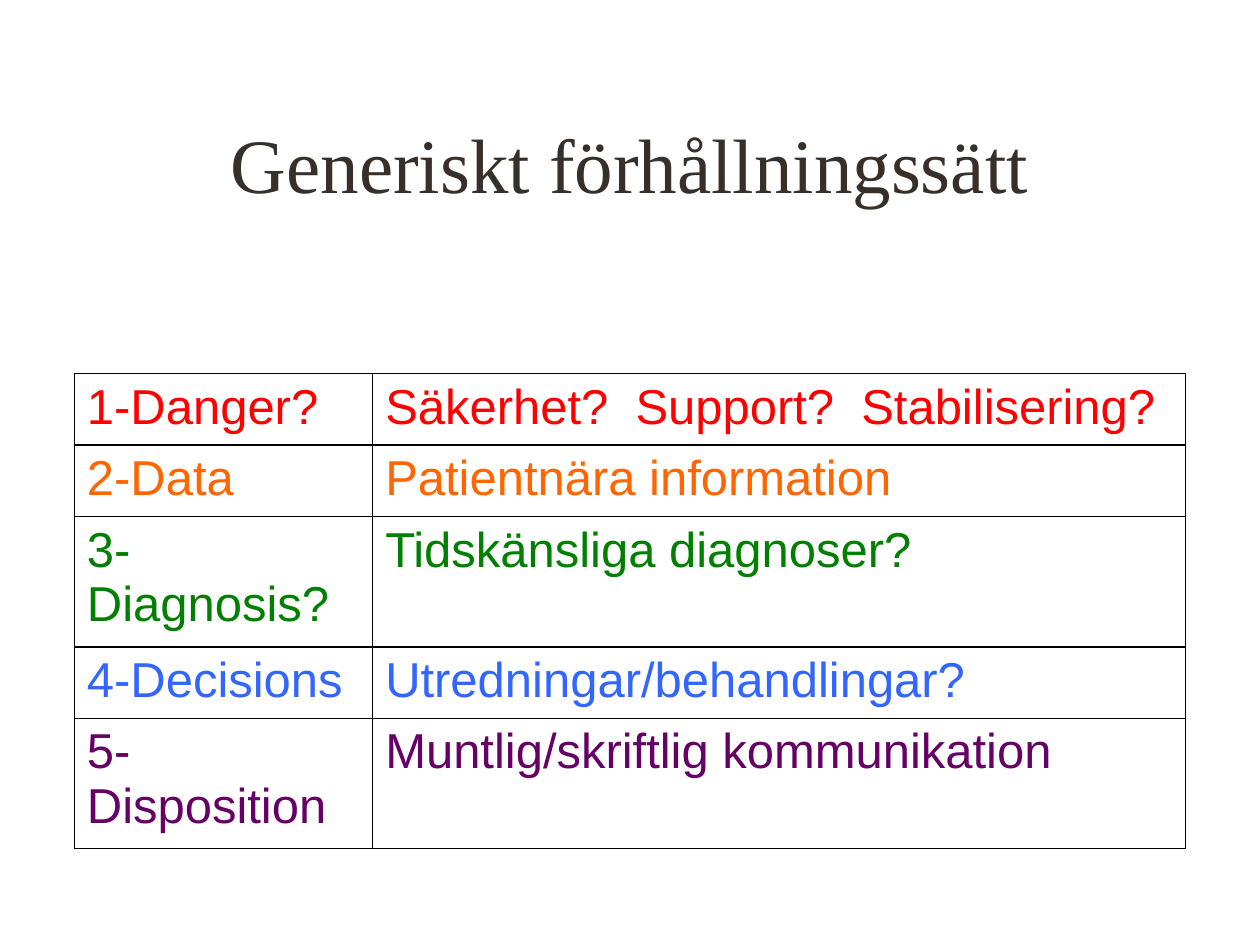
from lxml.etree import SubElement
from pptx import Presentation
from pptx.dml.color import RGBColor
from pptx.enum.text import MSO_ANCHOR, PP_ALIGN
from pptx.oxml.ns import qn
from pptx.util import Pt

STEPS = [
    ("1-Danger?", "Säkerhet?  Support?  Stabilisering?", "FF0000"),
    ("2-Data", "Patientnära information", "FF6600"),
    ("3-Diagnosis?", "Tidskänsliga diagnoser?", "008000"),
    ("4-Decisions", "Utredningar/behandlingar?", "3366FF"),
    ("5-Disposition", "Muntlig/skriftlig kommunikation", "660066"),
]
WIDTHS = (170.5, 464.5)
ROW = 40.8


def paint(color, tint):
    color.rgb = RGBColor.from_string(tint)


def style(frame, face, size, tint):
    for para in frame.paragraphs:
        for run in para.runs:
            run.font.name = face
            run.font.size = Pt(size)
            paint(run.font.color, tint)


def add_title(slide, text):
    box = slide.shapes.add_textbox(Pt(54), Pt(48), Pt(612), Pt(90))
    frame = box.text_frame
    frame.word_wrap = True
    frame.vertical_anchor = MSO_ANCHOR.MIDDLE
    frame.text = text
    frame.paragraphs[0].alignment = PP_ALIGN.CENTER
    style(frame, "Times New Roman", 44, "37302A")


def add_border(cell, tint):
    props = cell._tc.get_or_add_tcPr()
    for side in ("a:lnL", "a:lnR", "a:lnT", "a:lnB"):
        line = SubElement(props, qn(side), w=str(Pt(1)))
        fill = SubElement(line, qn("a:solidFill"))
        SubElement(fill, qn("a:srgbClr"), val=tint)


def add_steps(slide):
    shape = slide.shapes.add_table(
        len(STEPS), len(WIDTHS), Pt(42.5), Pt(213.5),
        Pt(sum(WIDTHS)), Pt(ROW * len(STEPS)))
    table = shape.table
    table.first_row = False
    table.horz_banding = False
    for column, width in zip(table.columns, WIDTHS):
        column.width = Pt(width)
    for row, (*words, tint) in zip(table.rows, STEPS):
        row.height = Pt(ROW)
        for cell, text in zip(row.cells, words):
            cell.text_frame.text = text
            style(cell.text_frame, "Arial", 28, tint)
            add_border(cell, "000000")
            cell.fill.background()


def main():
    deck = Presentation()
    deck.slide_width = Pt(720)
    deck.slide_height = Pt(540)
    slide = deck.slides.add_slide(deck.slide_layouts[6])
    add_title(slide, "Generiskt förhållningssätt")
    add_steps(slide)
    deck.save("out.pptx")


if __name__ == "__main__":
    main()
